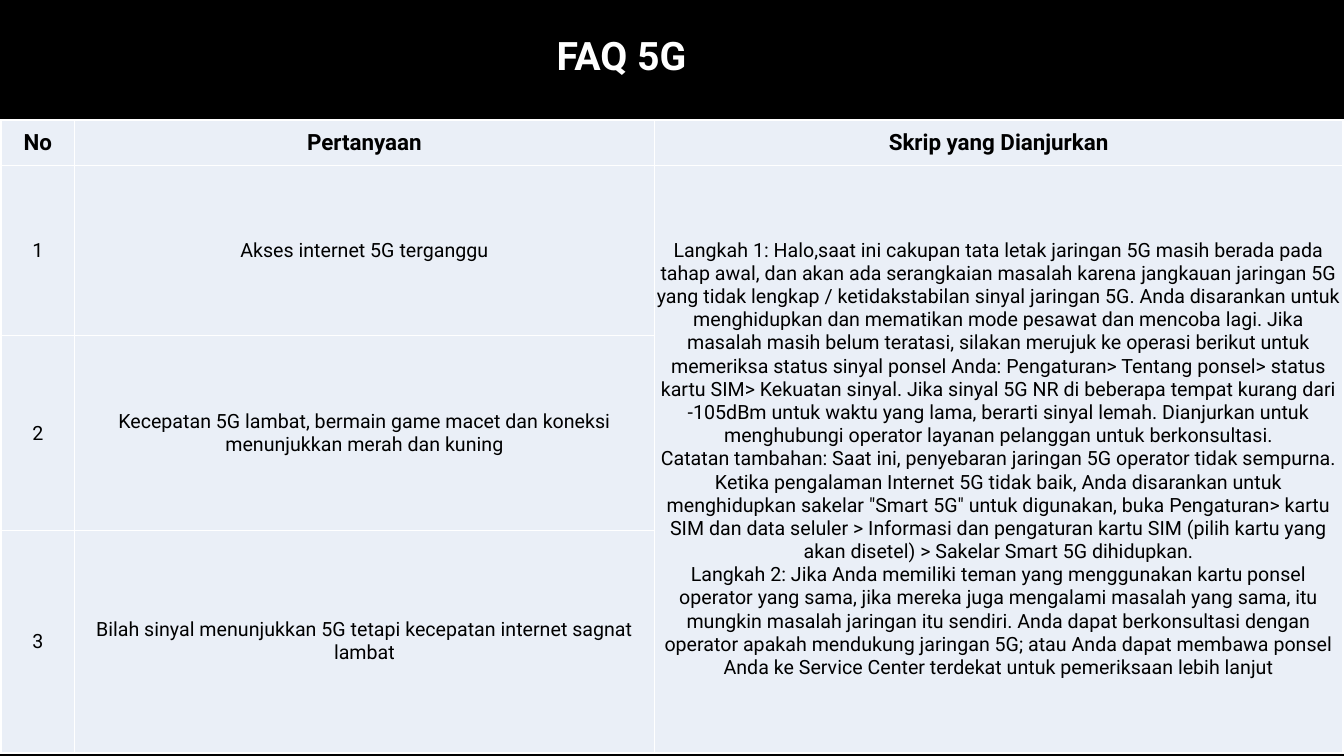
from lxml import etree
from pptx import Presentation
from pptx.dml.color import RGBColor
from pptx.enum.text import MSO_ANCHOR, MSO_AUTO_SIZE, PP_ALIGN
from pptx.oxml.ns import qn
from pptx.util import Inches, Pt

CENTER, LEFT = PP_ALIGN.CENTER, PP_ALIGN.LEFT
MIDDLE, TOP = MSO_ANCHOR.MIDDLE, MSO_ANCHOR.TOP
FIT_SHAPE = MSO_AUTO_SIZE.SHAPE_TO_FIT_TEXT

COLORS = {"background": "000000", "title": "FFFFFF", "text": "000000",
          "cell": "EAEFF7", "border": "FFFFFF"}
FONT = "Roboto"

HEADERS = ["No", "Pertanyaan", "Skrip yang Dianjurkan"]
QUESTIONS = [
    "Akses internet 5G terganggu",
    "Kecepatan 5G lambat, bermain game macet dan koneksi menunjukkan merah dan kuning",
    "Bilah sinyal menunjukkan 5G tetapi kecepatan internet sagnat lambat",
]
ANSWER = [
    "Langkah 1: Halo,saat ini cakupan tata letak jaringan 5G masih berada pada tahap awal, "
    "dan akan ada serangkaian masalah karena jangkauan jaringan 5G yang tidak lengkap / "
    "ketidakstabilan sinyal jaringan 5G. Anda disarankan untuk menghidupkan dan mematikan "
    "mode pesawat dan mencoba lagi. Jika masalah masih belum teratasi, silakan merujuk ke "
    "operasi berikut untuk memeriksa status sinyal ponsel Anda: Pengaturan> Tentang ponsel> "
    "status kartu SIM> Kekuatan sinyal. Jika sinyal 5G NR di beberapa tempat kurang dari "
    "-105dBm untuk waktu yang lama, berarti sinyal lemah. Dianjurkan untuk menghubungi "
    "operator layanan pelanggan untuk berkonsultasi.",
    "Catatan tambahan: Saat ini, penyebaran jaringan 5G operator tidak sempurna. Ketika "
    "pengalaman Internet 5G tidak baik, Anda disarankan untuk menghidupkan sakelar "
    "\"Smart 5G\" untuk digunakan, buka Pengaturan> kartu SIM dan data seluler > Informasi "
    "dan pengaturan kartu SIM (pilih kartu yang akan disetel) > Sakelar Smart 5G dihidupkan.",
    "Langkah 2: Jika Anda memiliki teman yang menggunakan kartu ponsel operator yang sama, "
    "jika mereka juga mengalami masalah yang sama, itu mungkin masalah jaringan itu sendiri. "
    "Anda dapat berkonsultasi dengan operator apakah mendukung jaringan 5G; atau Anda dapat "
    "membawa ponsel Anda ke Service Center terdekat untuk pemeriksaan lebih lanjut",
]
COLUMN_WIDTHS = [0.73, 5.75, 6.83]
ROW_HEIGHTS = [0.45, 1.69, 1.93, 2.21]


class FaqSlide:
    """Builds the elements of one slide in a shared style."""

    def __init__(self, presentation):
        self.slide = presentation.slides.add_slide(presentation.slide_layouts[5])
        fill = self.slide.background.fill
        fill.solid()
        fill.fore_color.rgb = self.color("background")

    def color(self, name):
        return RGBColor.from_string(COLORS[name])

    def format_text(self, text_frame, size, color, bold, alignment):
        for paragraph in text_frame.paragraphs:
            paragraph.alignment = alignment
            for run in paragraph.runs:
                run.font.name = FONT
                run.font.size = Pt(size)
                run.font.bold = bold
                run.font.color.rgb = self.color(color)

    def add_title(self, text, left, top, width, height):
        title = self.slide.shapes.title
        title.left, title.top = Inches(left), Inches(top)
        title.width, title.height = Inches(width), Inches(height)
        text_frame = title.text_frame
        text_frame.text = text
        text_frame.word_wrap = False
        text_frame.auto_size = FIT_SHAPE
        text_frame.vertical_anchor = TOP
        self.format_text(text_frame, 28, "title", True, LEFT)

    def add_borders(self, cell):
        properties = cell._tc.get_or_add_tcPr()
        for position, side in enumerate(("a:lnL", "a:lnR", "a:lnT", "a:lnB")):
            line = etree.Element(qn(side), w=str(Pt(1)))
            fill = etree.SubElement(line, qn("a:solidFill"))
            etree.SubElement(fill, qn("a:srgbClr"), val=COLORS["border"])
            properties.insert(position, line)

    def format_cell(self, cell, text, is_header, inset):
        cell.text_frame.text = text
        cell.vertical_anchor = MIDDLE
        cell.margin_left = cell.margin_right = cell.margin_top = Inches(inset)
        cell.margin_bottom = 0
        cell.fill.solid()
        cell.fill.fore_color.rgb = self.color("cell")
        self.add_borders(cell)
        self.format_text(cell.text_frame, 16 if is_header else 14, "text", is_header, CENTER)

    def add_faq_table(self, rows, left, top):
        frame = self.slide.shapes.add_table(
            len(ROW_HEIGHTS), len(COLUMN_WIDTHS), Inches(left), Inches(top),
            Inches(sum(COLUMN_WIDTHS)), Inches(sum(ROW_HEIGHTS)))
        table = frame.table
        for column, width in zip(table.columns, COLUMN_WIDTHS):
            column.width = Inches(width)
        for row, height in zip(table.rows, ROW_HEIGHTS):
            row.height = Inches(height)
        for row_index, row in enumerate(rows):
            for column_index, text in enumerate(row):
                is_header = row_index == 0
                inset = 0.01 if is_header or column_index == 0 else 0
                self.format_cell(table.cell(row_index, column_index), text, is_header, inset)
        table.cell(1, 2).merge(table.cell(len(rows) - 1, 2))


def main():
    presentation = Presentation()
    presentation.slide_width = Inches(13.33)
    presentation.slide_height = Inches(7.5)
    answers = ["\n".join(ANSWER), "", ""]
    rows = [HEADERS]
    for number, (question, answer) in enumerate(zip(QUESTIONS, answers), start=1):
        rows.append([str(number), question, answer])
    faq = FaqSlide(presentation)
    faq.add_title("FAQ 5G", 5.42, 0.26, 1.74, 0.57)
    faq.add_faq_table(rows, 0.01, 1.19)
    presentation.save("out.pptx")


if __name__ == "__main__":
    main()
